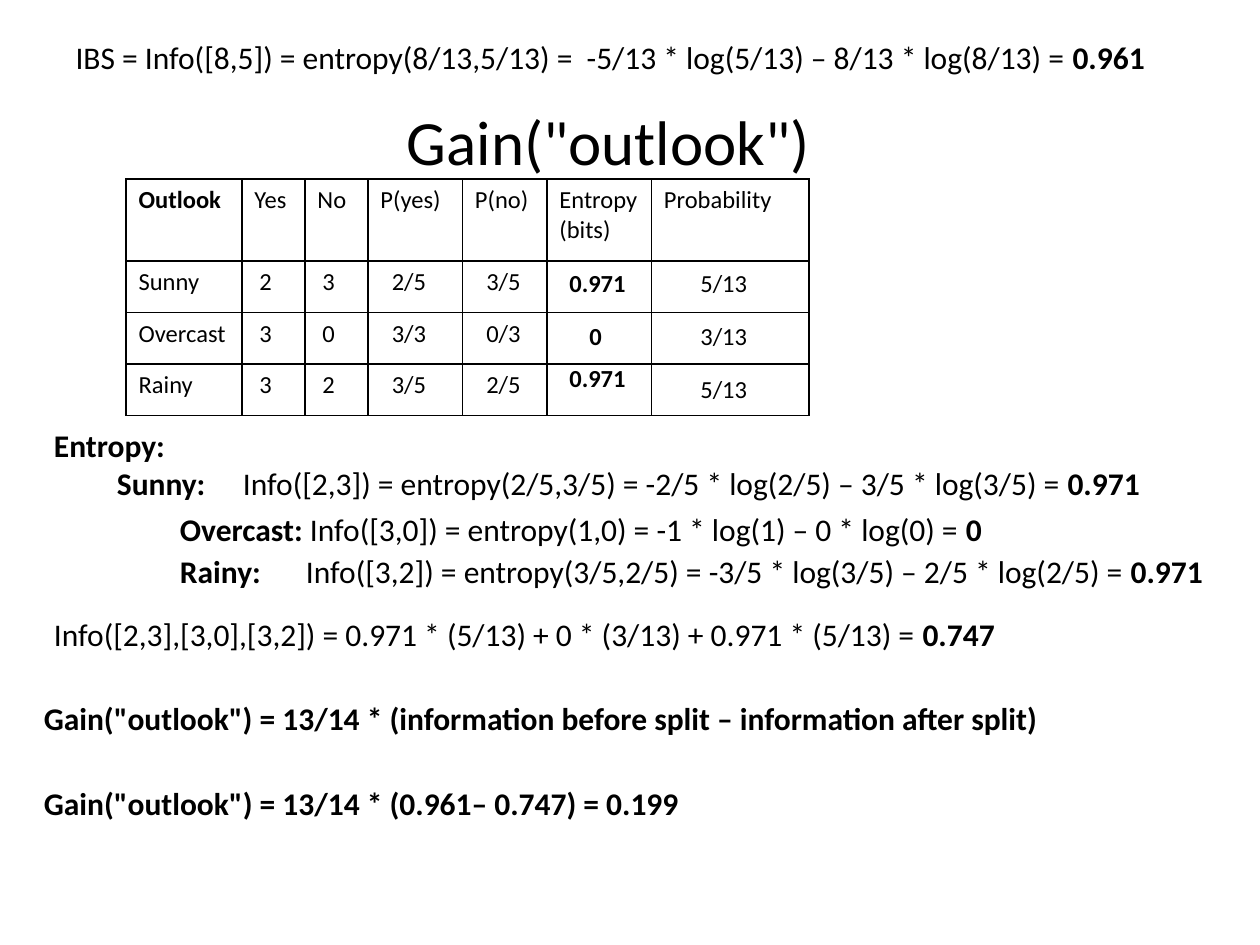
from typing import NamedTuple

from lxml import etree
from pptx import Presentation
from pptx import util as u
from pptx.dml.color import RGBColor
from pptx.enum import text
from pptx.oxml import ns

BLACK = RGBColor(0, 0, 0)
FONT = "Calibri"


class Span(NamedTuple):
    words: str
    bold: bool = False


class Note(NamedTuple):
    left: float
    top: float
    width: float
    height: float
    lines: list[list[Span]]
    size: int = 18
    wrap: bool = False
    align: text.PP_ALIGN = text.PP_ALIGN.LEFT
    anchor: text.MSO_ANCHOR = text.MSO_ANCHOR.TOP
    indent: float = 0


def fill_paragraph(para, spans: list[Span], size: int) -> None:
    """Write spans into a paragraph with one shared font."""
    para.font.name, para.font.size = FONT, u.Pt(size)
    para.font.color.rgb = BLACK
    for span in spans:
        run = para.add_run()
        run.text, run.font.bold = span.words, span.bold


def draw_note(page, note: Note) -> None:
    """Draw one text box."""
    box = page.shapes.add_textbox(*map(u.Inches, note[:4]))
    frame = box.text_frame
    frame.word_wrap, frame.vertical_anchor = note.wrap, note.anchor
    for index, spans in enumerate(note.lines):
        para = frame.add_paragraph() if index else frame.paragraphs[0]
        para.alignment = note.align
        fill_paragraph(para, spans, note.size)
    frame.margin_left = u.Inches(0.1 + note.indent)


def border_cell(cell) -> None:
    """Give a cell thin black lines on all four sides."""
    properties = cell._tc.get_or_add_tcPr()
    for index, side in enumerate(("a:lnL", "a:lnR", "a:lnT", "a:lnB")):
        line = etree.Element(ns.qn(side), w=str(u.Pt(1)))
        fill = etree.SubElement(line, ns.qn("a:solidFill"))
        etree.SubElement(fill, ns.qn("a:srgbClr"), val=str(BLACK))
        properties.insert(index, line)


def draw_table(page) -> None:
    """Draw the outlook counts and class probabilities."""
    widths = [0.92, 0.5, 0.5, 0.75, 0.67, 0.83, 1.25]
    heights = [0.65, 0.41, 0.41, 0.41]
    margins = [0.1, 0.14, 0.14, 0.19, 0.19, 0.1, 0.1]
    rows = [
        ["Outlook", "Yes", "No", "P(yes)", "P(no)", "Entropy\v(bits)", "Probability"],
        ["Sunny", "2", "3", "2/5", "3/5", "", ""],
        ["Overcast", "3", "0", "3/3", "0/3", "", ""],
        ["Rainy", "3", "2", "3/5", "2/5", "", ""],
    ]
    frame = page.shapes.add_table(len(rows), len(widths), u.Inches(1), u.Inches(1.42),
                                  u.Inches(sum(widths)), u.Inches(sum(heights)))
    table = frame.table
    table.first_row = table.horz_banding = False
    for column, width in zip(table.columns, widths):
        column.width = u.Inches(width)
    for row_index, (row, height) in enumerate(zip(rows, heights)):
        table.rows[row_index].height = u.Inches(height)
        for column_index, words in enumerate(row):
            cell = table.cell(row_index, column_index)
            cell.fill.background()
            border_cell(cell)
            if row_index:
                cell.margin_left = u.Inches(margins[column_index])
            para = cell.text_frame.paragraphs[0]
            para.text = words
            para.font.name, para.font.size = FONT, u.Pt(14)
            para.font.color.rgb = BLACK
            para.font.bold = words == "Outlook"


def value(left: float, top: float, width: float, words: str, bold: bool) -> Note:
    """Describe a value laid over the table."""
    return Note(left, top, width, 0.64, [[Span(words, bold)]], size=14)


NOTES = [
    Note(0.33, 0.75, 9, 0.72, [[Span('Gain("outlook")')]], 36, True,
         text.PP_ALIGN.CENTER, text.MSO_ANCHOR.MIDDLE),
    Note(0, 0.25, 10, 0.4, [[
        Span("IBS = Info([8,5]) = entropy(8/13,5/13) =  -5/13 * log(5/13) – 8/13 * log(8/13) = "),
        Span("0.961", True)]], wrap=True, indent=0.5),
    value(4.42, 2.08, 0.65, "0.971", True),
    value(4.58, 2.5, 0.3, "0", True),
    value(4.42, 2.83, 0.65, "0.971", True),
    value(5.46, 2.08, 0.58, "5/13", False),
    value(5.46, 2.5, 0.58, "3/13", False),
    value(5.46, 2.92, 0.58, "5/13", False),
    Note(0.33, 3.33, 9.43, 1.01, [
        [Span("Entropy:", True)],
        [Span("\tSunny:", True),
         Span("\tInfo([2,3]) = entropy(2/5,3/5) = -2/5 * log(2/5) – 3/5 * log(3/5) = "),
         Span("0.971", True)]]),
    Note(1.33, 4, 6.64, 0.71, [[
        Span("Overcast: ", True),
        Span("Info([3,0]) = entropy(1,0) = -1 * log(1) – 0 * log(0) = "),
        Span("0", True)]]),
    Note(1.33, 4.33, 8.42, 0.71, [[
        Span("Rainy:", True),
        Span("\tInfo([3,2]) = entropy(3/5,2/5) = -3/5 * log(3/5) – 2/5 * log(2/5) = "),
        Span("0.971", True)]]),
    Note(0.33, 4.83, 7.76, 0.71, [[
        Span("Info([2,3],[3,0],[3,2]) = 0.971 * (5/13) + 0 * (3/13) + 0.971 * (5/13) = "),
        Span("0.747", True)]]),
    Note(0.25, 5.5, 8.34, 0.71, [[
        Span('Gain("outlook") = 13/14 * (information before split – information after split)',
             True)]]),
    Note(0.25, 6.17, 5.29, 0.71, [[
        Span('Gain("outlook") = 13/14 * (0.961– 0.747) = 0.199', True)]]),
]


def main() -> None:
    """Build the information gain slide."""
    deck = Presentation()
    deck.slide_width, deck.slide_height = u.Inches(10), u.Inches(7.5)
    page = deck.slides.add_slide(deck.slide_layouts[6])
    draw_table(page)
    for note in NOTES:
        draw_note(page, note)
    deck.save("out.pptx")


if __name__ == "__main__":
    main()
